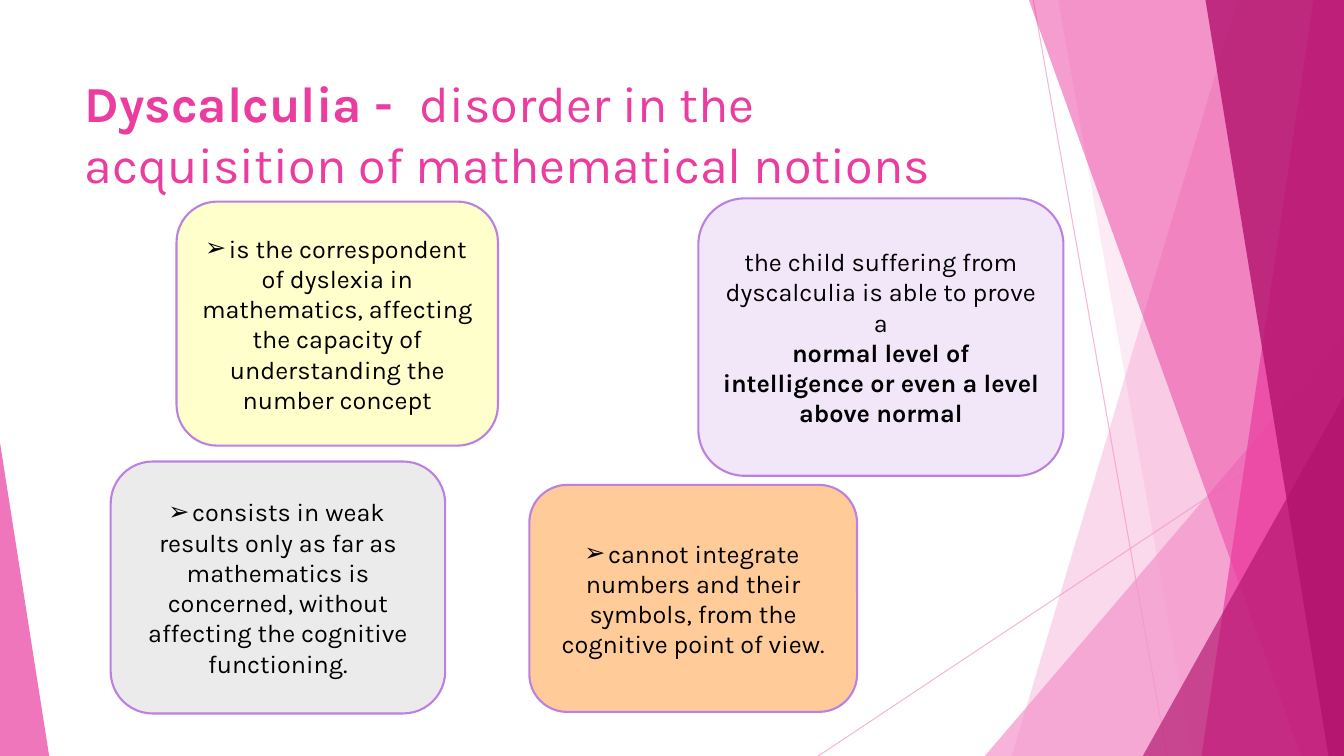
from lxml.etree import SubElement
from pptx import Presentation
from pptx.dml.color import RGBColor
from pptx.enum.shapes import MSO_CONNECTOR, MSO_SHAPE
from pptx.enum.text import MSO_ANCHOR as Anchor, MSO_AUTO_SIZE as AutoSize, PP_ALIGN as Align
from pptx.oxml.ns import qn
from pptx.util import Cm, Pt

PALE_PINK = RGBColor(0xF4, 0x96, 0xCB)
PINK = RGBColor(0xEB, 0x3D, 0x9F)
MAGENTA = RGBColor(0xB2, 0x13, 0x6D)
PURPLE = RGBColor(0xBC, 0x80, 0xE0)
YELLOW = RGBColor(0xFF, 0xFF, 0xCC)
LILAC = RGBColor(0xF2, 0xE6, 0xF9)
GREY = RGBColor(0xEB, 0xEB, 0xEB)
ORANGE = RGBColor(0xFF, 0xCC, 0x99)
BLACK = RGBColor(0, 0, 0)
WIDTH, HEIGHT = 33.87, 19.05


def add_text(paragraph, text, size=18, color=BLACK, bold=False, align=Align.CENTER, bullet=None):
    paragraph.alignment = align
    if bullet:
        props = paragraph._p.get_or_add_pPr()
        SubElement(props, qn("a:buFont")).set("typeface", "Arial")
        SubElement(props, qn("a:buChar")).set("char", bullet)
    run = paragraph.add_run()
    run.text = text
    run.font.name = "Karla"
    run.font.size = Pt(size)
    run.font.bold = bold
    run.font.color.rgb = color


def set_opacity(shape, percent):
    color = next(shape._element.spPr.iter(qn("a:srgbClr")))
    SubElement(color, qn("a:alpha")).set("val", str(percent * 1000))


prs = Presentation()
prs.slide_width, prs.slide_height = Cm(WIDTH), Cm(HEIGHT)
slide = prs.slides.add_slide(prs.slide_layouts[5])
shapes = slide.shapes
title = shapes.title

# Thin crossing lines
for x1, y1, x2 in [(26.04, 0, 29.41), (WIDTH, 10.24, 20.62)]:
    ray = shapes.add_connector(MSO_CONNECTOR.STRAIGHT, Cm(x1), Cm(y1), Cm(x2), Cm(HEIGHT))
    ray.line.color.rgb = PALE_PINK
    ray.line.width = Pt(0.75)
    set_opacity(ray, 70)
    SubElement(ray._element.spPr, qn("a:effectLst"))

# Translucent facets: panels (top x, bottom x) reach the right edge,
# triangles (left, top, width, peak) stand on the bottom edge
facets = [
    ((31.19, 25.5), PALE_PINK, 36),
    ((26.67, 30.05), PALE_PINK, 20),
    ((24.82, 8.46, 9.05, 1), PALE_PINK, 72),
    ((25.93, 32.79), PINK, 50),
    ((33.1, 30.28), PINK, 70),
    ((30.38, 33.48), MAGENTA, 80),
    ((28.8, 9.98, 5.07, 1), MAGENTA, 66),
    ((0, 11.15, 1.24, 0), PINK, 70),
]
for geometry, color, opacity in facets:
    if len(geometry) == 2:
        top_x, bottom_x = geometry
        outline = shapes.build_freeform(Cm(top_x), 0)
        outline.add_line_segments([(Cm(WIDTH), 0), (Cm(WIDTH), Cm(HEIGHT)), (Cm(bottom_x), Cm(HEIGHT))])
        facet = outline.convert_to_shape()
    else:
        left, top, width, peak = geometry
        facet = shapes.add_shape(MSO_SHAPE.ISOSCELES_TRIANGLE,
                                 Cm(left), Cm(top), Cm(width), Cm(HEIGHT - top))
        facet.adjustments[0] = peak
    facet.shadow.inherit = False
    facet.line.fill.background()
    facet.fill.solid()
    facet.fill.fore_color.rgb = color
    set_opacity(facet, opacity)

# Title, in front of the facets
shapes._spTree.append(title._element)
title.left, title.top, title.width, title.height = Cm(1.88), Cm(1.7), Cm(23.88), Cm(3.66)
title.text_frame.auto_size = AutoSize.NONE
title.text_frame.vertical_anchor = Anchor.TOP
heading = title.text_frame.paragraphs[0]
add_text(heading, "Dyscalculia -  ", size=36, color=PINK, bold=True, align=Align.LEFT)
add_text(heading, "disorder in the acquisition of mathematical notions", size=36, color=PINK, align=Align.LEFT)

# Fact boxes: position and size, fill, bullet, paragraphs (later ones are bold)
facts = [
    ((4.45, 5.08, 8.1, 6.15), YELLOW, "➢",
     ["is the correspondent of dyslexia in mathematics, affecting the capacity of "
      "understanding the number concept"]),
    ((17.6, 5, 9.2, 6.99), LILAC, None,
     ["the child suffering from dyscalculia is able to prove a",
      "normal level of intelligence or even a level above normal"]),
    ((2.79, 11.63, 8.43, 6.35), GREY, "➢",
     ["consists in weak results only as far as mathematics is concerned, without "
      "affecting the cognitive functioning."]),
    ((13.34, 12.22, 8.26, 5.72), ORANGE, "➢",
     ["cannot integrate numbers and their symbols, from the cognitive point of view."]),
]
for place, color, bullet, lines in facts:
    fact = shapes.add_shape(MSO_SHAPE.FLOWCHART_ALTERNATE_PROCESS, *map(Cm, place))
    fact.shadow.inherit = False
    fact.fill.solid()
    fact.fill.fore_color.rgb = color
    fact.line.color.rgb = PURPLE
    fact.line.width = Pt(1.5)
    frame = fact.text_frame
    frame.word_wrap = True
    frame.vertical_anchor = Anchor.MIDDLE
    for i, line in enumerate(lines):
        paragraph = frame.add_paragraph() if i else frame.paragraphs[0]
        add_text(paragraph, line, bold=i > 0, bullet=bullet)

prs.save("out.pptx")
